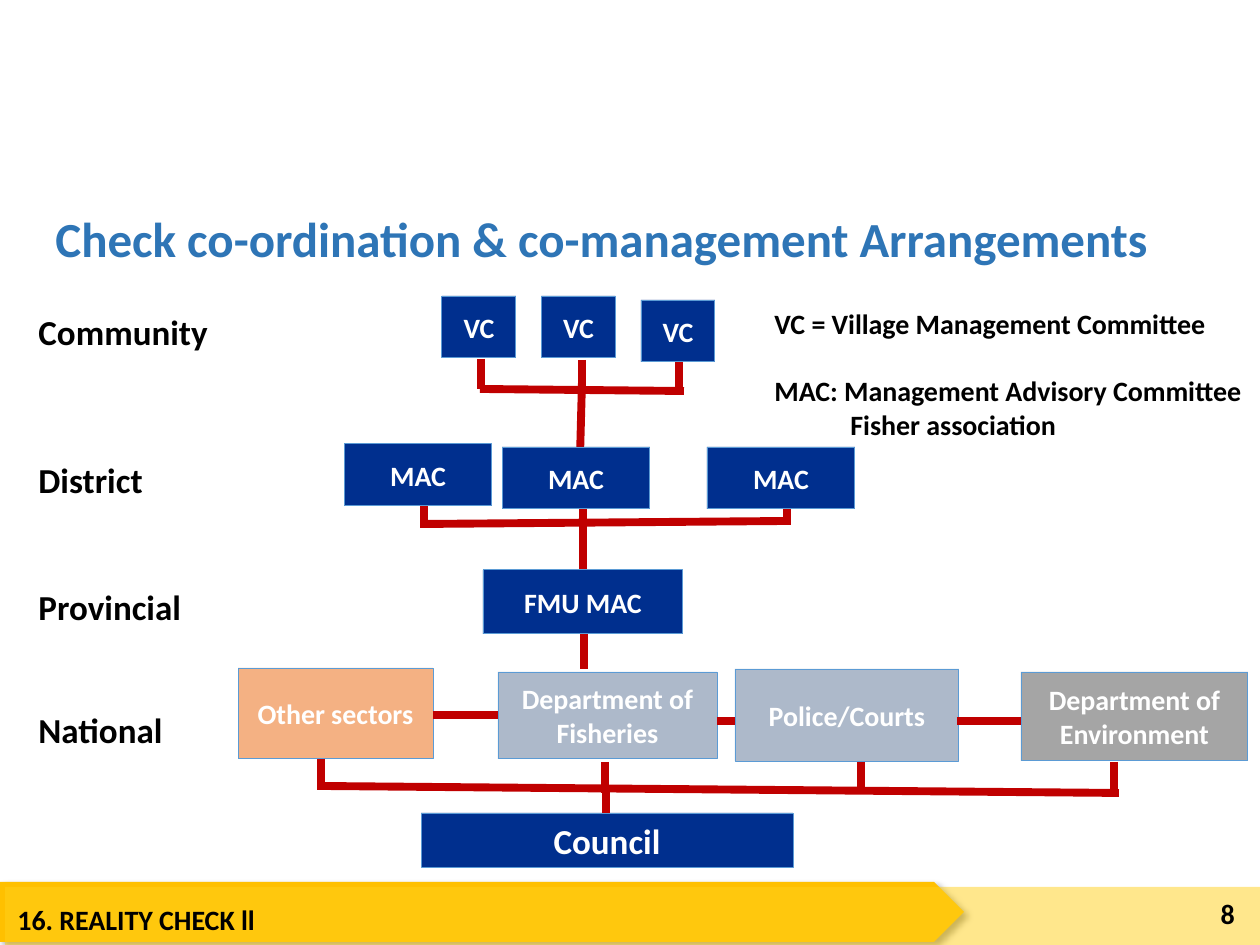
from lxml.etree import SubElement
from pptx import Presentation
from pptx.dml.color import RGBColor
from pptx.enum.shapes import MSO_CONNECTOR, MSO_SHAPE
from pptx.enum.text import MSO_ANCHOR, PP_ALIGN
from pptx.oxml.ns import qn
from pptx.util import Pt

PX = 914400 / 126
NAVY, RED, BLUE, BLACK, WHITE = "002F8E", "C00000", "5B9BD5", "000000", "FFFFFF"


def px(length):
    return round(length * PX)


def color(hex_code):
    return RGBColor.from_string(hex_code)


def write(paragraph, words, size, ink):
    run = paragraph.add_run()
    run.text = words
    run.font.name = "Calibri"
    run.font.size = Pt(size)
    run.font.bold = True
    run.font.color.rgb = color(ink)


def add_text(slide, box, words, size, ink=BLACK, align=PP_ALIGN.LEFT,
             anchor=MSO_ANCHOR.TOP, wrap=True):
    frame = slide.shapes.add_textbox(*map(px, box)).text_frame
    frame.word_wrap = wrap
    frame.vertical_anchor = anchor
    frame.paragraphs[0].alignment = align
    write(frame.paragraphs[0], words, size, ink)
    return frame


def add_panel(slide, preset, box, fill):
    panel = slide.shapes.add_shape(preset, *map(px, box))
    panel.shadow.inherit = False
    panel.fill.solid()
    panel.fill.fore_color.rgb = color(fill)
    panel.line.fill.background()
    return panel


def add_node(slide, box, words, fill=NAVY, size=16):
    node = add_panel(slide, MSO_SHAPE.RECTANGLE, box, fill)
    node.line.color.rgb = color(BLUE)
    node.line.width = Pt(0.5)
    frame = node.text_frame
    frame.word_wrap = True
    frame.vertical_anchor = MSO_ANCHOR.MIDDLE
    frame.paragraphs[0].alignment = PP_ALIGN.CENTER
    write(frame.paragraphs[0], words, size, WHITE)


def add_links(slide, left, top, links):
    for x1, y1, x2, y2 in links:
        link = slide.shapes.add_connector(
            MSO_CONNECTOR.STRAIGHT, px(left + x1), px(top + y1), px(left + x2), px(top + y2))
        link.line.color.rgb = color(RED)
        link.line.width = Pt(4.5)
        SubElement(link._element.spPr, qn("a:effectLst"))


def footer(slide, left, top, width):
    # Arrow-shaped band with a soft shadow
    band = add_panel(slide, MSO_SHAPE.PENTAGON, (left, top, 964, 60), "FFC000")
    effects = band._element.spPr.find(qn("a:effectLst"))
    shadow = SubElement(effects, qn("a:outerShdw"), blurRad=str(Pt(4)),
                        dist=str(Pt(3)), dir="2700000", algn="tl", rotWithShape="0")
    shade = SubElement(shadow, qn("a:srgbClr"), val=BLACK)
    SubElement(shade, qn("a:alpha"), val="40000")

    # Half-transparent strip over it
    strip = add_panel(slide, MSO_SHAPE.RECTANGLE, (left + 5, top + 5, width - 5, 62), "FFD01B")
    tint = strip._element.spPr.find(qn("a:solidFill"))[0]
    SubElement(tint, qn("a:alpha"), val="50000")

    add_text(slide, (left + 5, top + 14, 926, 52), "16. REALITY CHECK ll", 16)
    add_text(slide, (left + width - 105, top + 6, 92, 50), "8", 16,
             align=PP_ALIGN.RIGHT, anchor=MSO_ANCHOR.MIDDLE)


def level_names(slide, left, top):
    levels = [("Community", 0), ("District", 148), ("Provincial", 275), ("National", 398)]
    for level, drop in levels:
        add_text(slide, (left, top + drop, 260, 57), level, 20)


def legend(slide, left, top):
    frame = add_text(slide, (left, top, 499, 149),
                     "VC = Village Management Committee", 16, wrap=False)
    advisory = frame.add_paragraph()
    advisory.space_before = Pt(19.5)
    write(advisory, "MAC: Management Advisory Committee", 16, BLACK)
    association = frame.add_paragraph()
    association._p.get_or_add_pPr().set("marL", str(px(76)))
    write(association, "Fisher association", 16, BLACK)


def community(slide, left, top):
    add_links(slide, left, top, [
        (140, 86, 138, 161), (140, 64, 140, 92), (38, 93, 242, 95),
        (39, 63, 39, 93), (237, 65, 237, 97)])
    for column, drop in enumerate((0, 0, 4)):
        add_node(slide, (left + 99.5 * column, top + drop, 74, 62), "VC")


def district(slide, left, top):
    add_links(slide, left, top, [
        (239, 56, 239, 126), (80, 34, 80, 84), (77, 80, 444, 77), (443, 31, 443, 81)])
    for across, drop in ((0, 0), (158, 3), (363, 3)):
        add_node(slide, (left + across, top + drop, 148, 62), "MAC")


def provincial(slide, left, top):
    add_links(slide, left, top, [(101, 61, 101, 99)])
    add_node(slide, (left, top, 200, 64), "FMU MAC")


def national(slide, left, top):
    sectors = [
        ("Other sectors", "F4B183", 0, 0, 195, 91),
        ("Department of Fisheries", "ADB9CA", 260, 4, 219, 87),
        ("Police/Courts", "ADB9CA", 497, 1, 224, 92),
        ("Department of Environment", "A5A5A5", 783, 4, 227, 89)]
    for sector, fill, across, drop, width, height in sectors:
        add_node(slide, (left + across, top + drop, width, height), sector, fill)
    add_links(slide, left, top, [
        (195, 47, 260, 47), (479, 53, 497, 53), (719, 53, 783, 53)])


def council(slide, left, top):
    add_node(slide, (left + 183, top + 54, 372, 54), "Council", size=20)
    drops = [(x, 3, x, 34) for x in (367, 623, 876)]
    add_links(slide, left, top, [
        (82, 27, 881, 34), (83, 0, 83, 31), *drops, (368, 32, 368, 54)])


def main():
    deck = Presentation()
    deck.slide_width, deck.slide_height = px(1260), px(945)
    slide = deck.slides.add_slide(deck.slide_layouts[6])

    footer(slide, 0, 882, 1260)
    title = add_text(slide, (43, 200, 1205, 86),
                     "Check co-ordination & co-management Arrangements", 28,
                     "2E75B6", anchor=MSO_ANCHOR.MIDDLE)
    title.paragraphs[0].line_spacing = 0.8
    level_names(slide, 26, 304)
    legend(slide, 762, 300)

    # Chart tiers, from village to council
    community(slide, 442, 296)
    district(slide, 344, 444)
    provincial(slide, 483, 570)
    national(slide, 238, 668)
    council(slide, 238, 759)
    deck.save("out.pptx")


if __name__ == "__main__":
    main()
